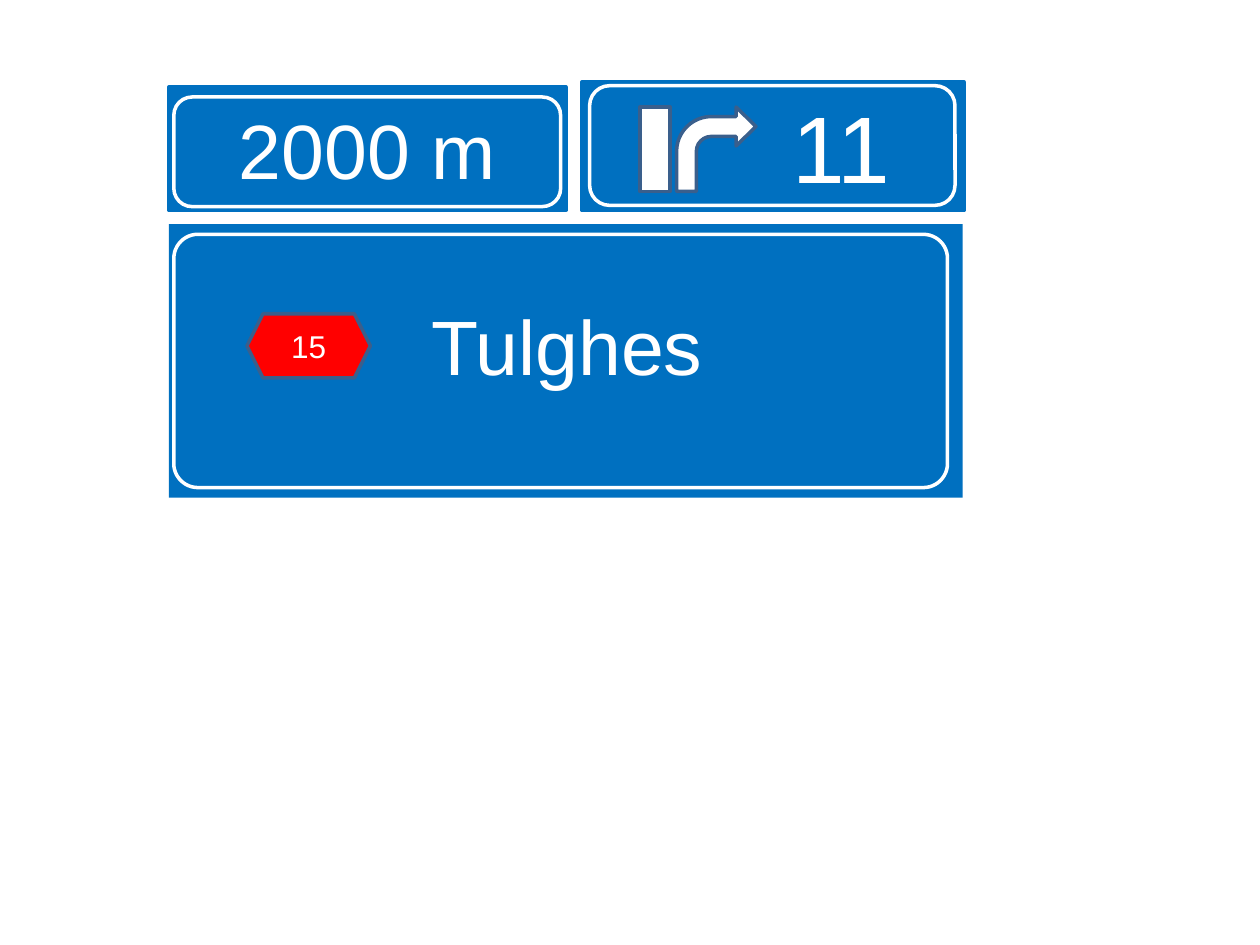
"""Build a motorway exit sign slide."""
import pptx
import pptx.dml.color
import pptx.enum.shapes
import pptx.enum.text
import pptx.util

KIND = pptx.enum.shapes.MSO_SHAPE
BLUE, WHITE, RED, EDGE = "0070C0", "FFFFFF", "FF0000", "3A5F8C"
FONT, LINE_WIDTH = "Arial", 2
SLIDE_SIZE = (10, 7.5)
MARGINS = (0.1, 0.05, 0.1, 0.05)

SIGN_PARTS = {
    "distance panel": dict(kind=KIND.ROUNDED_RECTANGLE, at=(1.34, 0.69, 3.15, 0.98),
                           adjust=[0], fill=BLUE, line=BLUE, text="2000 m", size=44),
    "exit panel": dict(kind=KIND.ROUNDED_RECTANGLE, at=(4.62, 0.65, 3.03, 1.02),
                       adjust=[0], fill=BLUE, line=BLUE, text="11", size=54,
                       margins=(1.18, 0.05, 0.1, 0.05)),
    "main road": dict(kind=KIND.RECTANGLE, at=(5.08, 0.85, 0.24, 0.67),
                      fill=WHITE, line=EDGE),
    "exit arrow": dict(kind=KIND.BENT_ARROW, at=(5.37, 0.85, 0.63, 0.67),
                       adjust=[0.25, 0.245, 0.25, 0.438], fill=WHITE, line=EDGE),
    "destination panel": dict(kind=KIND.RECTANGLE, at=(1.34, 1.78, 6.3, 2.17),
                              fill=BLUE, text="Tulghes", size=44,
                              margins=(0.12, 0.05, 0.1, 0.3)),
    "destination border": dict(kind=KIND.ROUNDED_RECTANGLE, at=(1.38, 1.86, 6.14, 2.01),
                               adjust=[0.095], line=WHITE),
    "exit border": dict(kind=KIND.ROUNDED_RECTANGLE, at=(4.68, 0.68, 2.9, 0.95),
                        line=WHITE),
    "distance border": dict(kind=KIND.ROUNDED_RECTANGLE, at=(1.38, 0.77, 3.07, 0.87),
                            line=WHITE),
    "road number": dict(kind=KIND.HEXAGON, at=(1.96, 2.49, 0.98, 0.51),
                        fill=RED, line=EDGE, text="15", size=18),
}


def paint(fill, color):
    """Fill with a hex colour, or with nothing."""
    if color:
        fill.solid()
        fill.fore_color.rgb = pptx.dml.color.RGBColor.from_string(color)
    else:
        fill.background()


def write(shape, text, size, margins):
    """Put centred white text in a shape."""
    frame = shape.text_frame
    frame_format = {
        "word_wrap": True,
        "vertical_anchor": pptx.enum.text.MSO_ANCHOR.MIDDLE,
    }
    for side, margin in zip(("left", "top", "right", "bottom"), margins):
        frame_format[f"margin_{side}"] = pptx.util.Inches(margin)
    for key, value in frame_format.items():
        setattr(frame, key, value)
    para = frame.paragraphs[0]
    para.alignment = pptx.enum.text.PP_ALIGN.CENTER
    span = para.add_run()
    span.text = text
    for key, value in {"name": FONT, "size": pptx.util.Pt(size)}.items():
        setattr(span.font, key, value)
    paint(span.font.fill, WHITE)


def add_part(page, part):
    """Draw one part of the sign."""
    shape = page.shapes.add_shape(part["kind"], *map(pptx.util.Inches, part["at"]))
    shape.shadow.inherit = False
    for index, value in enumerate(part.get("adjust", [])):
        shape.adjustments[index] = value
    paint(shape.fill, part.get("fill"))
    paint(shape.line.fill, part.get("line"))
    if "line" in part:
        shape.line.width = pptx.util.Pt(LINE_WIDTH)
    if "text" in part:
        write(shape, part["text"], part["size"], part.get("margins", MARGINS))


def main():
    """Build and save the deck."""
    deck = pptx.Presentation()
    deck.slide_width, deck.slide_height = map(pptx.util.Inches, SLIDE_SIZE)
    page = deck.slides.add_slide(deck.slide_layouts[6])
    for part in SIGN_PARTS.values():
        add_part(page, part)
    deck.save("out.pptx")


if __name__ == "__main__":
    main()
